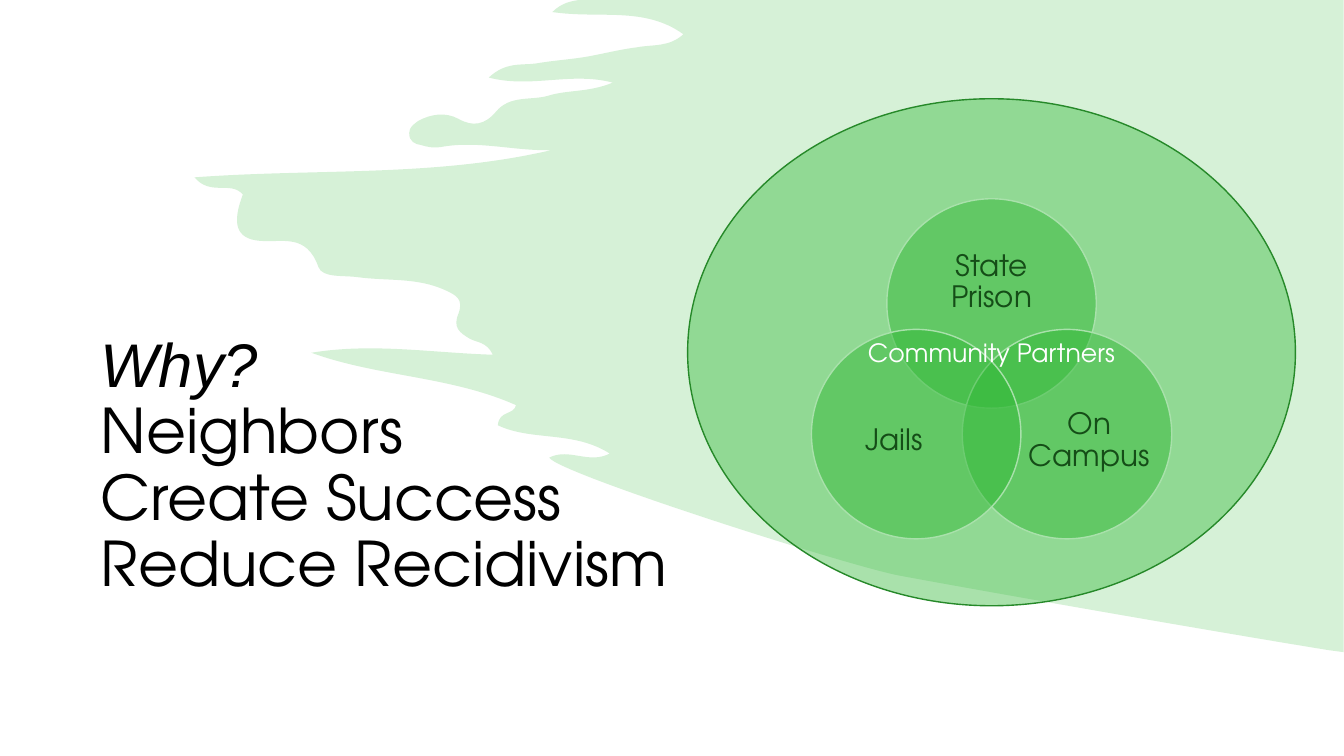
"""Builds a slide with a three-circle Venn diagram over a painted green splash."""
from dataclasses import dataclass
from math import cos, radians, sin

from lxml.etree import SubElement
from pptx import Presentation
from pptx.dml.color import RGBColor
from pptx.enum.shapes import MSO_SHAPE as Shape
from pptx.enum.text import MSO_ANCHOR as Anchor, MSO_AUTO_SIZE as AutoSize, PP_ALIGN as Align
from pptx.oxml.ns import qn
from pptx.util import Pt


@dataclass(frozen=True)
class Theme:
    """Colours, fonts and type sizes of the slide."""
    green: str = "33B938"
    dark_green: str = "268929"
    white: str = "FFFFFF"
    black: str = "000000"
    font: str = "TeX Gyre Adventor"
    accent_font: str = "Arial"
    title_size: float = 44
    label_size: float = 21
    partner_size: float = 18


THEME = Theme()
SPLASH_UNIT = 0.72
SPLASH_START = (575, 0)
SPLASH_CURVES = [
    (567, 1, 557, 3, 548, 12), (595, 19, 639, 6, 678, 34),
    (664, 47, 648, 44, 632, 47), (616, 49, 600, 53, 584, 56),
    (567, 59, 549, 60, 532, 63), (518, 65, 502, 61, 485, 77),
    (527, 88, 566, 71, 608, 82), (584, 92, 563, 89, 544, 95),
    (527, 100, 506, 94, 492, 111), (481, 124, 469, 126, 455, 118),
    (442, 111, 428, 113, 415, 120), (411, 123, 406, 126, 406, 132),
    (406, 141, 412, 143, 418, 144), (424, 146, 431, 147, 437, 146),
    (474, 139, 510, 150, 547, 149), (431, 176, 314, 167, 193, 176),
    (209, 195, 229, 179, 241, 193), (230, 222, 234, 237, 258, 239),
    (280, 241, 304, 231, 316, 265), (320, 276, 341, 273, 355, 275),
    (384, 279, 414, 275, 442, 288), (453, 293, 460, 297, 455, 311),
    (449, 325, 456, 330, 466, 336), (473, 340, 483, 339, 489, 352),
    (428, 350, 369, 340, 309, 350), (375, 374, 447, 373, 512, 402),
    (510, 412, 495, 407, 494, 422), (528, 438, 569, 427, 605, 450),
    (584, 461, 565, 444, 545, 454), (552, 469, 840, 561, 892, 571),
    (978, 587, 1195, 625, 1318, 645),
]
SPLASH_CORNERS = [(1333, 647), (1333, 0)]

VENN_CENTRE = (708.3, 279)
VENN_SPREAD = 62.2
CIRCLE_SIZE = 149.6
VENN_SETS = [
    ("State Prison", -90, (653.6, 168.2, 109.4, 67)),
    ("On Campus", 30, (733, 274, 90, 82.1)),
    ("Jails", 150, (593.7, 274.3, 90, 82.1)),
]
TITLE_LINES = ["Why?", "Neighbors", "Create Success", "Reduce Recidivism"]


def points(*values):
    """Turns numbers of points into lengths."""
    return [Pt(value) for value in values]


def style_shape(shape, opacity, line_colour=None):
    """Gives a shape a translucent green fill and an optional outline."""
    shape.shadow.inherit = False
    shape.fill.solid()
    shape.fill.fore_color.rgb = RGBColor.from_string(THEME.green)
    colour = shape.element.spPr.find(qn("a:solidFill")).find(qn("a:srgbClr"))
    SubElement(colour, qn("a:alpha")).set("val", str(opacity * 1000))
    if line_colour:
        shape.line.color.rgb = RGBColor.from_string(line_colour)
        shape.line.width = Pt(1)
    else:
        shape.line.fill.background()


def style_para(para, size, colour, align, spacing=None, font=THEME.font, italic=False):
    """Formats one paragraph and its runs."""
    para.alignment = align
    para.line_spacing = spacing
    for span in para.runs:
        span.font.name = font
        span.font.size = Pt(size)
        span.font.italic = italic
        span.font.color.rgb = RGBColor.from_string(colour)


def splash_points(*values):
    """Turns pairs of splash coordinates into lengths."""
    lengths = points(*(value * SPLASH_UNIT for value in values))
    return list(zip(lengths[::2], lengths[1::2]))


def bend(segment, curve, shape):
    """Turns one straight segment of a freeform into a cubic curve."""
    segment.tag = qn("a:cubicBezTo")
    segment.remove(segment[0])
    for x, y in splash_points(*curve):
        point = SubElement(segment, qn("a:pt"))
        point.set("x", str(x - shape.left))
        point.set("y", str(y - shape.top))


def add_splash(page):
    """Draws the painted splash behind the diagram."""
    corners = [curve[-2:] for curve in SPLASH_CURVES] + SPLASH_CORNERS
    builder = page.shapes.build_freeform(*splash_points(*SPLASH_START)[0])
    builder.add_line_segments([splash_points(*corner)[0] for corner in corners], close=True)
    splash = builder.convert_to_shape()
    segments = list(splash.element.iter(qn("a:lnTo")))
    for segment, curve in zip(segments, SPLASH_CURVES):
        bend(segment, curve, splash)
    style_shape(splash, 20)


def add_label(shapes, text, place):
    """Adds a centred label without insets."""
    box = shapes.add_textbox(*points(*place))
    frame = box.text_frame
    frame.word_wrap = True
    frame.vertical_anchor = Anchor.MIDDLE
    frame.margin_left = frame.margin_right = frame.margin_top = frame.margin_bottom = 0
    frame.text = text
    style_para(frame.paragraphs[0], THEME.label_size, THEME.black, Align.CENTER, 0.9)


def add_venn(page):
    """Places three overlapping circles evenly around a centre."""
    shapes = page.shapes.add_group_shape().shapes
    for text, angle, place in VENN_SETS:
        left = VENN_CENTRE[0] + VENN_SPREAD * cos(radians(angle)) - CIRCLE_SIZE / 2
        top = VENN_CENTRE[1] + VENN_SPREAD * sin(radians(angle)) - CIRCLE_SIZE / 2
        circle = shapes.add_shape(Shape.OVAL, *points(left, top, CIRCLE_SIZE, CIRCLE_SIZE))
        style_shape(circle, 50, THEME.white)
        add_label(shapes, text, place)


def add_partners(page):
    """Covers the circles with the surrounding community oval."""
    oval = page.shapes.add_shape(
        Shape.FLOWCHART_CONNECTOR, *points(491.2, 70.56, 434.16, 362.16))
    style_shape(oval, 42, THEME.dark_green)
    frame = oval.text_frame
    frame.word_wrap = True
    frame.vertical_anchor = Anchor.MIDDLE
    frame.text = "Community Partners"
    style_para(frame.paragraphs[0], THEME.partner_size, THEME.white, Align.CENTER)


def fill_title(page):
    """Moves the title to the front and fills its lines."""
    title = page.shapes.title
    title.element.getparent().append(title.element)
    title.left, title.top, title.width, title.height = points(64.8, 235.1, 511.92, 322.56)
    frame = title.text_frame
    frame.word_wrap = True
    frame.auto_size = AutoSize.NONE
    frame.vertical_anchor = Anchor.TOP
    frame.text = "\n".join(TITLE_LINES)
    question, *answers = frame.paragraphs
    style_para(question, THEME.title_size, THEME.black, Align.LEFT, 0.9,
               THEME.accent_font, True)
    for para in answers:
        style_para(para, THEME.title_size, THEME.black, Align.LEFT, 0.9)


def main():
    """Builds and saves the deck."""
    deck = Presentation()
    deck.slide_width, deck.slide_height = points(960, 540)
    page = deck.slides.add_slide(deck.slide_layouts.get_by_name("Title Only"))
    add_splash(page)
    add_venn(page)
    add_partners(page)
    fill_title(page)
    deck.save("out.pptx")


if __name__ == "__main__":
    main()
